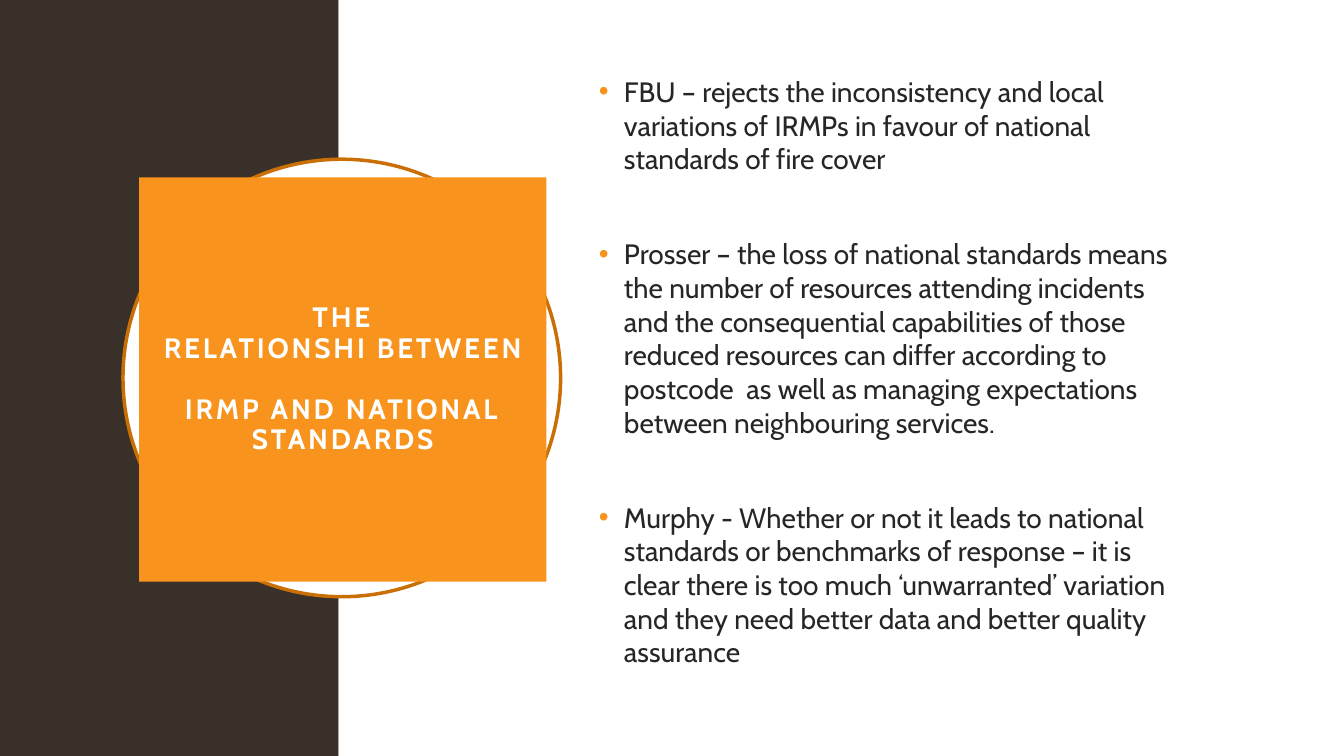
from pptx import Presentation
from pptx.dml.color import RGBColor
from pptx.enum.shapes import MSO_SHAPE
from pptx.enum.text import MSO_ANCHOR, PP_ALIGN
from pptx.oxml import parse_xml
from pptx.oxml.ns import nsdecls
from pptx.util import Inches, Pt

BROWN = RGBColor(0x39, 0x30, 0x2A)
WHITE = RGBColor(0xFF, 0xFF, 0xFF)
RUST = RGBColor(0xCA, 0x6F, 0x06)
ORANGE = RGBColor(0xF8, 0x93, 0x1D)
INK = RGBColor(0x26, 0x26, 0x26)

TITLE = [
    ["THE", "RELATIONSHI BETWEEN"],
    ["IRMP AND NATIONAL STANDARDS"],
]
POINTS = [
    "FBU – rejects the inconsistency and local variations of IRMPs in favour "
    "of national standards of fire cover",
    "Prosser – the loss of national standards means the number of resources "
    "attending incidents and the consequential capabilities of those reduced "
    "resources can differ according to postcode  as well as managing "
    "expectations between neighbouring services.",
    "Murphy - Whether or not it leads to national standards or benchmarks of "
    "response – it is clear there is too much ‘unwarranted’ variation and they "
    "need better data and better quality assurance",
]


class Page:
    font = "Cabin"
    size = Pt(20)

    def __init__(self, slide):
        self.slide = slide

    def shape(self, kind, box, fill, line=None):
        item = self.slide.shapes.add_shape(kind, *map(Inches, box))
        item.shadow.inherit = False
        item.fill.solid()
        item.fill.fore_color.rgb = fill
        if line is None:
            item.line.fill.background()
        else:
            item.line.color.rgb = line
            item.line.width = Pt(2.5)
        return item

    def run(self, para, text, color, bold=False):
        run = para.add_run()
        run.text = text
        run.font.name = self.font
        run.font.size = self.size
        run.font.bold = bold
        run.font.color.rgb = color
        return run

    def paras(self, frame, count, gap):
        frame.word_wrap = True
        frame.vertical_anchor = MSO_ANCHOR.MIDDLE
        for i in range(count):
            para = frame.add_paragraph() if i else frame.paragraphs[0]
            para.space_before = Pt(gap if i else 0)
            yield para

    def title(self, box, groups):
        frame = self.shape(MSO_SHAPE.RECTANGLE, box, ORANGE).text_frame
        frame.margin_left = frame.margin_right = Inches(0.2)
        frame.margin_top = frame.margin_bottom = Inches(0.2)
        for para, lines in zip(self.paras(frame, len(groups), 22), groups):
            para.alignment = PP_ALIGN.CENTER
            para.line_spacing = 0.9
            for i, line in enumerate(lines):
                if i:
                    para.add_line_break()
                run = self.run(para, line, WHITE, True)
                run.font._element.set("spc", "200")

    def bullets(self, box, points):
        frame = self.slide.shapes.add_textbox(*map(Inches, box)).text_frame
        for para, point in zip(self.paras(frame, len(points), 44), points):
            props = para._p.get_or_add_pPr()
            props.set("marL", str(Inches(0.25)))
            props.set("indent", str(-Inches(0.25)))
            space = nsdecls("a")
            for mark in (
                f'<a:buClr {space}><a:srgbClr val="{ORANGE}"/></a:buClr>',
                f'<a:buFont {space} typeface="Arial"/>',
                f'<a:buChar {space} char="•"/>',
            ):
                props.append(parse_xml(mark))
            self.run(para, point, INK)


def main():
    deck = Presentation()
    deck.slide_width = Inches(13.33)
    deck.slide_height = Inches(7.5)
    page = Page(deck.slides.add_slide(deck.slide_layouts[6]))
    page.shape(MSO_SHAPE.RECTANGLE, (0, 0, 3.36, 7.5), BROWN)
    page.shape(MSO_SHAPE.RECTANGLE, (3.36, 0, 9.97, 7.5), WHITE)
    page.shape(MSO_SHAPE.OVAL, (1.22, 1.58, 4.34, 4.34), WHITE, RUST)
    page.title((1.38, 1.76, 4.04, 4.01), TITLE)
    page.bullets((5.84, 0.77, 6.09, 5.83), POINTS)
    deck.save("out.pptx")


if __name__ == "__main__":
    main()
